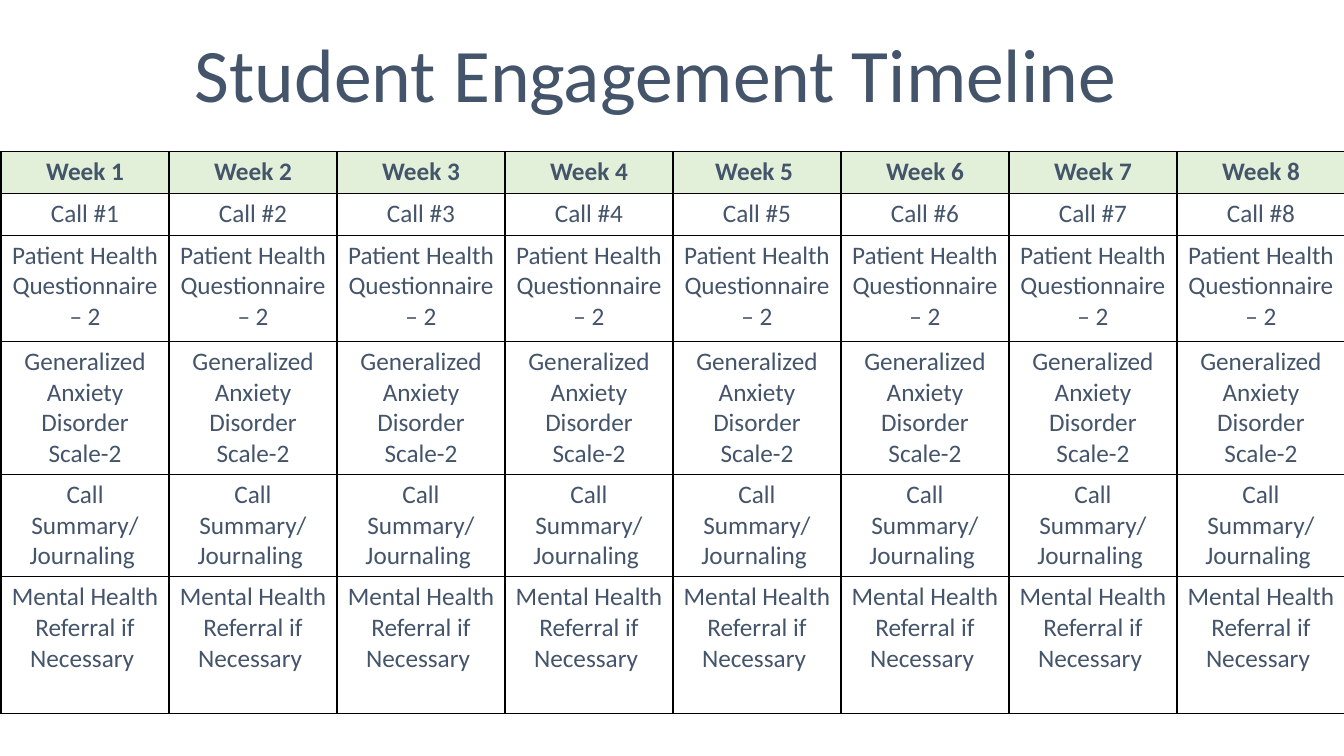
from dataclasses import dataclass

from lxml import etree
from pptx import Presentation
from pptx.dml.color import RGBColor
from pptx.enum.text import MSO_ANCHOR, PP_ALIGN
from pptx.oxml.ns import qn
from pptx.slide import Slide
from pptx.table import _Cell
from pptx.text.text import _Paragraph
from pptx.util import Emu, Pt

LEFT, CENTER = PP_ALIGN.LEFT, PP_ALIGN.CENTER
MIDDLE = MSO_ANCHOR.MIDDLE
TITLE_ONLY = 5
PX = 9525


@dataclass(frozen=True)
class Theme:
    font: str = "Calibri"
    text: str = "44546A"
    header: str = "E2F0D9"
    border: str = "000000"
    title_size: int = 54
    cell_size: int = 18
    border_width: int = 1


@dataclass(frozen=True)
class Box:
    left: int
    top: int
    width: int
    height: int

    def emu(self) -> tuple[Emu, Emu, Emu, Emu]:
        return px(self.left), px(self.top), px(self.width), px(self.height)


@dataclass(frozen=True)
class Row:
    label: str
    height: int
    header: bool = False


THEME = Theme()
TITLE_BOX = Box(176, 5, 1104, 139)
TABLE_LEFT, TABLE_TOP = 1, 144
WEEKS = 8
WEEK_WIDTH = 160
ROWS = [
    Row("Week {week}", 40, header=True),
    Row("Call #{week}", 40),
    Row("Patient Health Questionnaire – 2", 101),
    Row("Generalized Anxiety Disorder Scale-2", 112),
    Row("Call Summary/ Journaling ", 86),
    Row("Mental Health Referral if Necessary ", 130),
]
LABEL_OVERRIDES = {(0, 5): "Week 5 "}


def px(n: int) -> Emu:
    return Emu(n * PX)


def format_paragraph(p: _Paragraph, size: int, align: PP_ALIGN, bold: bool = False) -> None:
    p.alignment = align
    for r in p.runs:
        r.font.name = THEME.font
        r.font.size = Pt(size)
        r.font.bold = bold
        r.font.color.rgb = RGBColor.from_string(THEME.text)


def set_borders(cell: _Cell) -> None:
    tc_pr = cell._tc.get_or_add_tcPr()
    for side in ("lnL", "lnR", "lnT", "lnB"):
        ln = etree.SubElement(tc_pr, qn(f"a:{side}"), w=str(Pt(THEME.border_width)))
        fill = etree.SubElement(ln, qn("a:solidFill"))
        etree.SubElement(fill, qn("a:srgbClr"), val=THEME.border)


def add_title(slide: Slide, text: str) -> None:
    sp = slide.shapes.title
    sp.left, sp.top, sp.width, sp.height = TITLE_BOX.emu()
    tf = sp.text_frame
    tf.text = text
    tf.word_wrap = True
    tf.vertical_anchor = MIDDLE
    p = tf.paragraphs[0]
    p.line_spacing = 0.9
    format_paragraph(p, THEME.title_size, LEFT)


def fill_cell(cell: _Cell, text: str, header: bool) -> None:
    cell.text = text
    format_paragraph(cell.text_frame.paragraphs[0], THEME.cell_size, CENTER, header)
    set_borders(cell)
    if header:
        cell.fill.solid()
        cell.fill.fore_color.rgb = RGBColor.from_string(THEME.header)
    else:
        cell.fill.background()


def add_timeline(slide: Slide) -> None:
    box = Box(TABLE_LEFT, TABLE_TOP, WEEKS * WEEK_WIDTH, sum(row.height for row in ROWS))
    table = slide.shapes.add_table(len(ROWS), WEEKS, *box.emu()).table
    table.horz_banding = False
    for column in table.columns:
        column.width = px(WEEK_WIDTH)
    for i, row in enumerate(ROWS):
        table.rows[i].height = px(row.height)
        for week in range(1, WEEKS + 1):
            text = LABEL_OVERRIDES.get((i, week), row.label.format(week=week))
            fill_cell(table.cell(i, week - 1), text, row.header)


def main() -> None:
    prs = Presentation()
    prs.slide_width, prs.slide_height = px(1280), px(720)
    slide = prs.slides.add_slide(prs.slide_layouts[TITLE_ONLY])
    add_title(slide, "Student Engagement Timeline")
    add_timeline(slide)
    prs.save("out.pptx")


if __name__ == "__main__":
    main()
